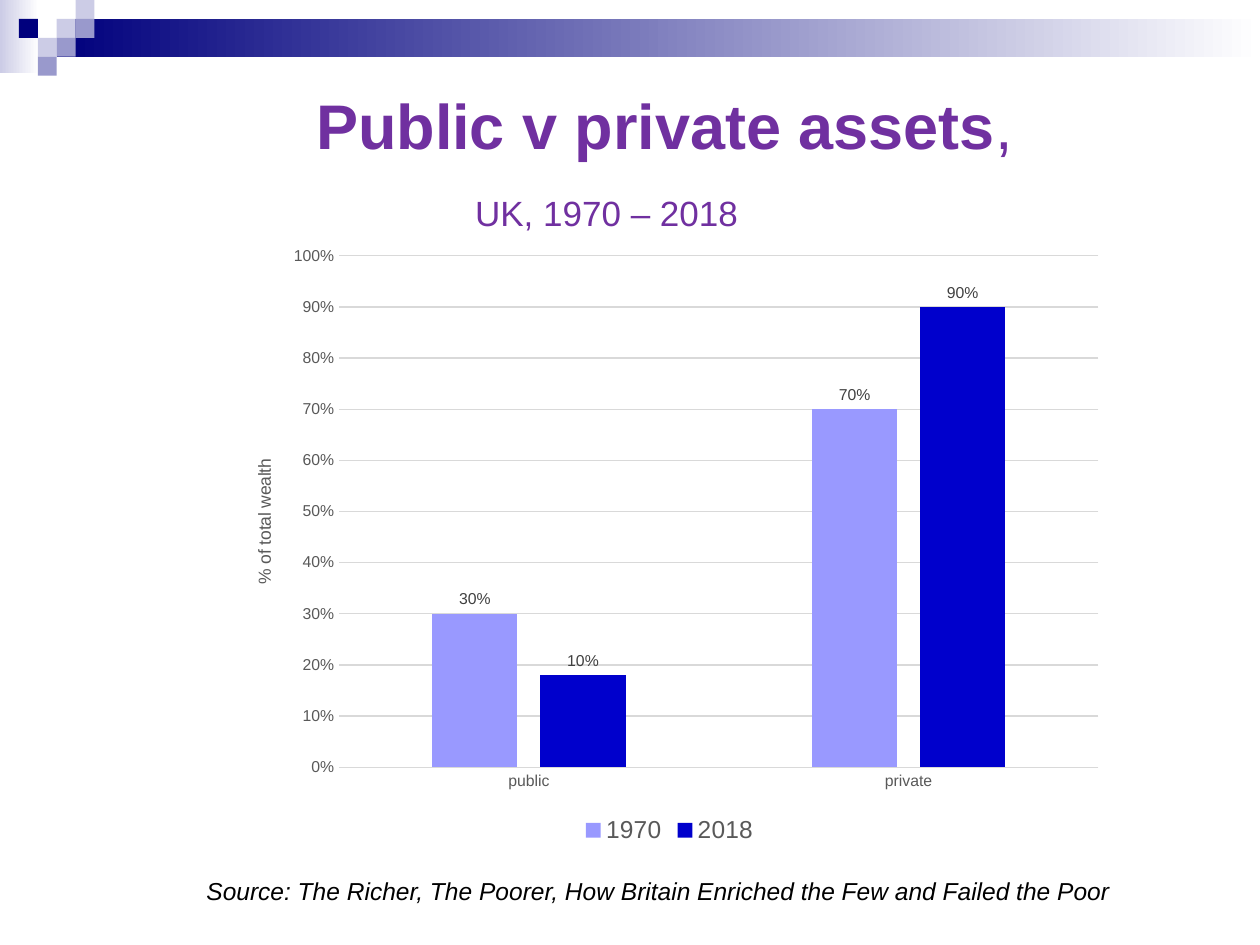
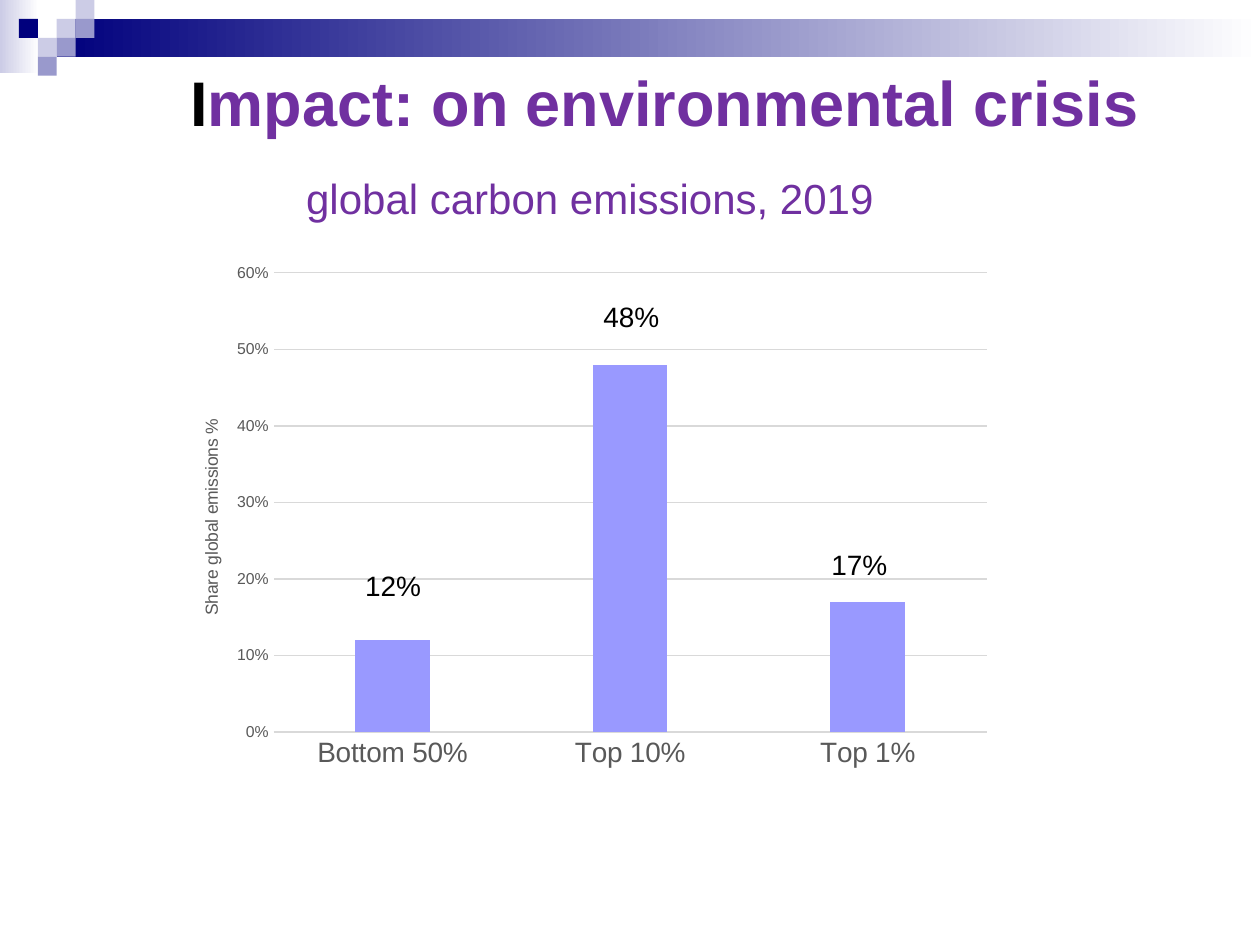
from lxml import etree
from pptx import Presentation
from pptx import util as u
from pptx.chart import data as cd
from pptx.dml.color import RGBColor
from pptx.enum import chart as ch, shapes as sh, text as tx
from pptx.oxml import ns

FONT = "Arial"
NAVY = RGBColor(0x00, 0x00, 0x7D)
PALE = RGBColor(0xCC, 0xCC, 0xE6)
MID = RGBColor(0x99, 0x99, 0xCC)
WHITE = RGBColor(0xFF, 0xFF, 0xFF)
BLACK = RGBColor(0x00, 0x00, 0x00)
PURPLE = RGBColor(0x70, 0x30, 0xA0)
LILAC = RGBColor(0x99, 0x99, 0xFF)
BLUE = RGBColor(0x00, 0x00, 0xCC)
GREY = RGBColor(0x59, 0x59, 0x59)
DARK = RGBColor(0x40, 0x40, 0x40)
RULE = RGBColor(0xD9, 0xD9, 0xD9)

CELL = 0.15
TILES = [(3, 1, PALE), (4, 0, PALE), (4, 1, MID), (2, 2, PALE),
         (1, 1, NAVY), (3, 2, MID), (2, 3, MID)]


def style(font, size, color, **more):
    looks = {"name": FONT, "size": u.Pt(size), **more}
    for key, val in looks.items():
        setattr(font, key, val)
    font.color.rgb = color


def box(at):
    return [u.Inches(n) for n in at]


def block(slide, at, color, fade=False):
    shape = slide.shapes.add_shape(sh.MSO_SHAPE.RECTANGLE, *box(at))
    shape.shadow.inherit = False
    shape.line.fill.background()
    if fade:
        shape.fill.gradient()
        shape.fill.gradient_angle = 0
        for stop, tint in zip(shape.fill.gradient_stops, (color, WHITE)):
            stop.color.rgb = tint
    else:
        shape.fill.solid()
        shape.fill.fore_color.rgb = color
    return shape


def band(slide, layout):
    parts = [block(slide, (0, 0, 0.31, 0.58), PALE, True),
             block(slide, (0.45, CELL, 9.55, 2 * CELL), NAVY, True)]
    for col, row, color in TILES:
        at = (col * CELL, row * CELL, CELL, CELL)
        parts.append(block(slide, at, color))
    for num, part in enumerate(parts):
        part.element.nvSpPr.cNvPr.set("id", str(20 + num))
        layout.shapes.element.insert(2 + num, part.element)


def title(slide, at, lines):
    shape = slide.shapes.title
    shape.left, shape.top, shape.width, shape.height = box(at)
    frame = shape.text_frame
    looks = {"word_wrap": True, "auto_size": tx.MSO_AUTO_SIZE.NONE,
             "vertical_anchor": tx.MSO_ANCHOR.MIDDLE}
    for key, val in looks.items():
        setattr(frame, key, val)
    for num, (left, gap, runs) in enumerate(lines):
        para = frame.add_paragraph() if num else frame.paragraphs[0]
        para.alignment = tx.PP_ALIGN.LEFT
        para.space_before = u.Pt(gap)
        props = para._p.get_or_add_pPr()
        props.set("marL", str(u.Inches(left)))
        props.set("indent", "0")
        for words, size, color, bold in runs:
            run = para.add_run()
            run.text = words
            style(run.font, size, color, bold=bold)


def note(slide, at, words, size, **more):
    frame = slide.shapes.add_textbox(*box(at)).text_frame
    frame.word_wrap = True
    frame.auto_size = tx.MSO_AUTO_SIZE.SHAPE_TO_FIT_TEXT
    run = frame.paragraphs[0].add_run()
    run.text = words
    style(run.font, size, BLACK, **more)


def place(node, **spots):
    old = node.find(ns.qn("c:layout"))
    if old is not None:
        node.remove(old)
    spot = etree.Element(ns.qn("c:layout"))
    inner = etree.SubElement(spot, ns.qn("c:manualLayout"))
    for key, val in spots.items():
        etree.SubElement(inner, ns.qn("c:" + key)).set("val", str(val))
    node.insert(0 if node.find(ns.qn("c:tx")) is None else 1, spot)


def axes(chart, size, top, words, spot):
    cat, val = chart.category_axis, chart.value_axis
    for axis, points in ((cat, size), (val, 9)):
        axis.major_tick_mark = axis.minor_tick_mark = ch.XL_TICK_MARK.NONE
        style(axis.tick_labels.font, points, GREY)
    looks = {"minimum_scale": 0, "maximum_scale": top, "major_unit": 0.1,
             "has_major_gridlines": True}
    for key, setting in looks.items():
        setattr(val, key, setting)
    val.tick_labels.number_format = "0%"
    val.tick_labels.number_format_is_linked = False
    val.format.line.fill.background()
    for line in (cat.format.line, val.major_gridlines.format.line):
        line.color.rgb = RULE
        line.width = u.Pt(0.75)
    head = val.axis_title
    head.text_frame.text = words
    style(head.text_frame.paragraphs[0].runs[0].font, 10, GREY, bold=False)
    body = head.element.find(".//" + ns.qn("a:bodyPr"))
    body.set("rot", "-5400000")
    body.set("vert", "horz")
    x, y = spot
    place(head.element, xMode="edge", yMode="edge", x=x, y=y)


def bars(slide, at, cats, rows, plot, **axis):
    data = cd.CategoryChartData(number_format="0%")
    data.categories = cats
    for name, vals, _ in rows:
        data.add_series(name, vals)
    kind = ch.XL_CHART_TYPE.COLUMN_CLUSTERED
    chart = slide.shapes.add_chart(kind, *box(at), data).chart
    chart.has_title = False
    chart.has_legend = False
    style(chart.font, 10, BLACK)
    group = chart.plots[0]
    for key, val in {"gap_width": 219, "overlap": -27,
                     "vary_by_categories": False}.items():
        setattr(group, key, val)
    for series, (_, _, color) in zip(group.series, rows):
        series.format.fill.solid()
        series.format.fill.fore_color.rgb = color
    axes(chart, **axis)
    x, y, w, h = plot
    area = chart.element.find(".//" + ns.qn("c:plotArea"))
    place(area, layoutTarget="inner", xMode="edge", yMode="edge",
          x=x, y=y, w=w, h=h)
    return chart


def labels(chart):
    for series in chart.plots[0].series:
        tags = series.data_labels
        looks = {"show_value": True, "number_format": "0%",
                 "number_format_is_linked": False,
                 "position": ch.XL_LABEL_POSITION.OUTSIDE_END}
        for key, val in looks.items():
            setattr(tags, key, val)
        style(tags.font, 9, DARK)


def retag(point, words):
    tag = point.data_label
    tag.text_frame.text = words
    style(tag.text_frame.paragraphs[0].runs[0].font, 9, DARK)
    tag.position = ch.XL_LABEL_POSITION.OUTSIDE_END


def legend(chart):
    chart.has_legend = True
    chart.legend.position = ch.XL_LEGEND_POSITION.BOTTOM
    chart.legend.include_in_layout = False
    style(chart.legend.font, 14, GREY)


def assets(slide):
    title(slide, (0.5, 0.52, 9, 1.5), [
        (1.91, 0, [("Public v private assets", 36, PURPLE, True),
                   (",", 36, PURPLE, False)]),
        (3.17, 17, [("UK, 1970 – 2018", 20, PURPLE, False)])])
    chart = bars(slide, (1.77, 1.86, 7.09, 4.88), ["public", "private"],
                 [("1970", (0.3, 0.7), LILAC), ("2018", (0.18, 0.9), BLUE)],
                 (0.13, 0.035, 0.85, 0.832), size=9, top=1,
                 words="% of total wealth", spot=(0.03, 0.36))
    labels(chart)
    retag(chart.plots[0].series[1].points[0], "10%")
    legend(chart)
    note(slide, (1.54, 6.9, 8.2, 0.34), "Source: The Richer, The Poorer, "
         "How Britain Enriched the Few and Failed the Poor", 14, italic=True)


def carbon(slide):
    title(slide, (0.5, 0.23, 9, 1.81), [
        (0.91, 0, [("I", 36, BLACK, True),
                   ("mpact: on environmental crisis", 36, PURPLE, True)]),
        (1.83, 19, [("global carbon emissions, 2019", 24, PURPLE, False)])])
    bars(slide, (1.22, 1.7, 6.85, 4.71), ["Bottom 50%", "Top 10%", "Top 1%"],
         [("Series 1", (0.12, 0.48, 0.17), LILAC)],
         (0.139, 0.099, 0.826, 0.774), size=16, top=0.6,
         words="Share global emissions %", spot=(0.05, 0.34))
    for left, top, words in ((2.8, 4.46, "12%"), (4.69, 2.33, "48%"),
                             (6.5, 4.3, "17%")):
        note(slide, (left, top, 0.9, 0.37), words, 16)


def main():
    deck = Presentation()
    deck.slide_width, deck.slide_height = u.Inches(10), u.Inches(7.5)
    layout = deck.slide_layouts[5]
    first, second = (deck.slides.add_slide(layout) for _ in range(2))
    band(first, layout)
    assets(first)
    carbon(second)
    deck.save("out.pptx")


if __name__ == "__main__":
    main()
